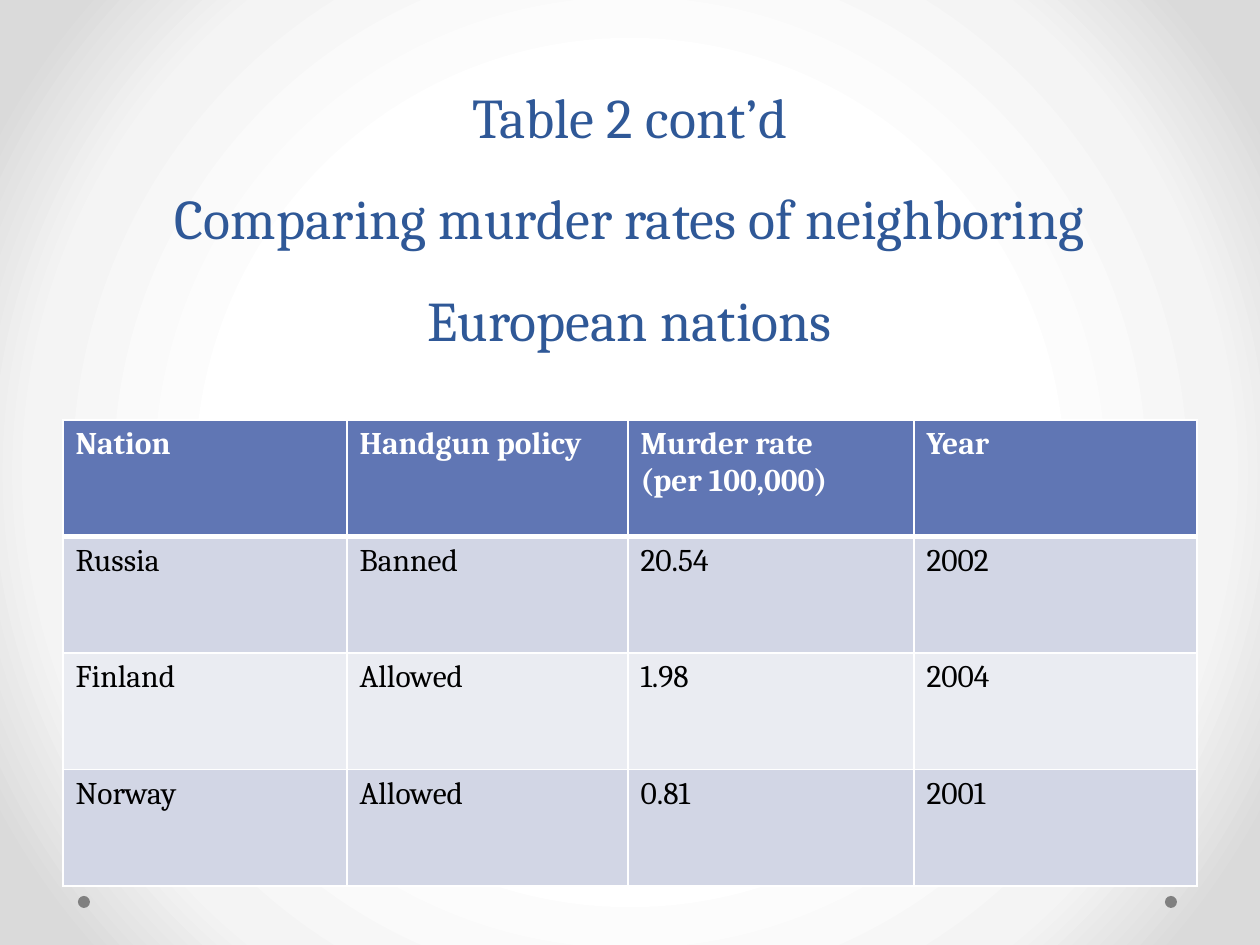
from lxml.etree import SubElement
from pptx import Presentation
from pptx.dml.color import RGBColor
from pptx.enum.shapes import MSO_SHAPE
from pptx.enum.text import MSO_ANCHOR, MSO_AUTO_SIZE, PP_ALIGN
from pptx.oxml import parse_xml
from pptx.oxml.ns import nsdecls, qn
from pptx.util import Emu, Pt

TITLE = "Table 2 cont’d\vComparing murder rates of neighboring European nations"
ROWS = [
    ["Nation", "Handgun policy", "Murder rate\n(per 100,000)", "Year"],
    ["Russia", "Banned", "20.54", "2002"],
    ["Finland", "Allowed", "1.98", "2004"],
    ["Norway", "Allowed", "0.81", "2001"],
]
COLUMN_WIDTHS = [284, 281, 286, 283]
DOT_LEFTS = [78, 1165]
BACKGROUND_STOPS = [(50, "FFFFFF"), (76, "F4F4F4"), (92, "DADADA")]
COLORS = {
    "title": "2F5897", "header": "6076B4", "odd": "D2D6E5", "even": "EAECF2",
    "white": "FFFFFF", "black": "000000", "dot": "808080",
}
FONT = "Cambria"
SCALE = 914400 / 126


def px(length):
    return Emu(round(length * SCALE))


def write(frame, text, size, color, bold=False, align=None, spacing=None):
    frame.text = text
    for paragraph in frame.paragraphs:
        paragraph.alignment = align
        paragraph.line_spacing = spacing
        for run in paragraph.runs:
            run.font.name = FONT
            run.font.size = Pt(size)
            run.font.bold = bold
            run.font.color.rgb = RGBColor.from_string(COLORS[color])


def fill_solid(fill, color):
    fill.solid()
    fill.fore_color.rgb = RGBColor.from_string(COLORS[color])


def set_radial_background(slide):
    """Fill the background with rings running outward from the centre."""
    stops = "".join(
        f'<a:gs pos="{percent * 1000}"><a:srgbClr val="{color}"/></a:gs>'
        for percent, color in BACKGROUND_STOPS
    )
    background = parse_xml(
        f'<p:bg {nsdecls("p", "a")}><p:bgPr><a:gradFill rotWithShape="1">'
        f'<a:gsLst>{stops}</a:gsLst><a:path path="circle">'
        '<a:fillToRect l="50000" t="50000" r="50000" b="50000"/></a:path>'
        '</a:gradFill><a:effectLst/></p:bgPr></p:bg>'
    )
    slide.element.cSld.insert(0, background)


def set_borders(cell, top, bottom):
    properties = cell._tc.get_or_add_tcPr()
    for side, points in (("L", 1), ("R", 1), ("T", top), ("B", bottom)):
        line = SubElement(properties, qn(f"a:ln{side}"), w=str(Pt(points)))
        solid = SubElement(line, qn("a:solidFill"))
        SubElement(solid, qn("a:srgbClr"), val=COLORS["white"])


def add_dots(slide):
    for left in DOT_LEFTS:
        dot = slide.shapes.add_shape(MSO_SHAPE.OVAL, px(left), px(896), px(12), px(12))
        dot.shadow.inherit = False
        fill_solid(dot.fill, "dot")
        dot.line.fill.background()


def format_title(slide):
    title = slide.shapes.title
    title.left, title.top, title.width, title.height = px(63), px(0), px(1134), px(359)
    frame = title.text_frame
    frame.auto_size = MSO_AUTO_SIZE.NONE
    frame.word_wrap = True
    frame.vertical_anchor = MSO_ANCHOR.BOTTOM
    write(frame, TITLE, 32, "title", align=PP_ALIGN.CENTER, spacing=Pt(58))


def add_rates_table(slide):
    table = slide.shapes.add_table(
        len(ROWS), len(COLUMN_WIDTHS), px(63), px(420), px(sum(COLUMN_WIDTHS)), px(466)
    ).table
    for column, width in zip(table.columns, COLUMN_WIDTHS):
        column.width = px(width)
    for row_index, row in enumerate(ROWS):
        header = row_index == 0
        band = "header" if header else "odd" if row_index % 2 else "even"
        for column_index, text in enumerate(row):
            cell = table.cell(row_index, column_index)
            set_borders(cell, top=3 if row_index == 1 else 1, bottom=3 if header else 1)
            fill_solid(cell.fill, band)
            write(cell.text_frame, text, 18, "white" if header else "black", bold=header)


def main():
    presentation = Presentation()
    presentation.slide_width, presentation.slide_height = px(1260), px(945)
    slide = presentation.slides.add_slide(presentation.slide_layouts[5])
    set_radial_background(slide)
    add_dots(slide)
    format_title(slide)
    add_rates_table(slide)
    presentation.save("out.pptx")


if __name__ == "__main__":
    main()
